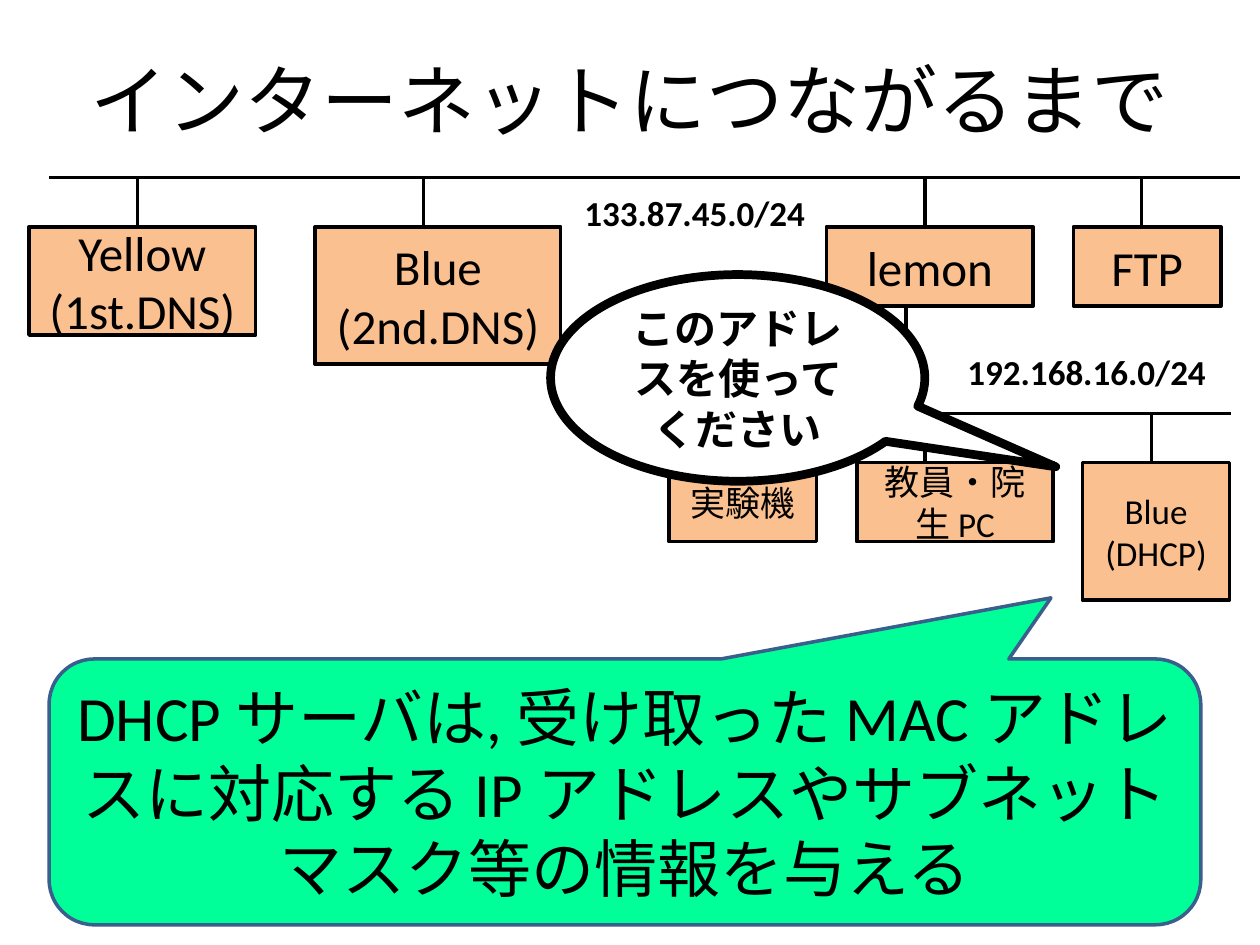
from lxml import etree
from pptx import Presentation
from pptx import util as u
from pptx.dml.color import RGBColor
from pptx.enum import shapes, text
from pptx.oxml.ns import qn

SCALE = 9144  # EMU per px, 100 px to the inch
FONT = "Calibri"
COLORS = {
    "ink": "000000",
    "host": "FAC090",
    "note": "00FF99",
    "note_line": "3A5F8C",
    "speech": "FFFFFF",
}


def px(*lengths):
    return [u.Emu(length * SCALE) for length in lengths]


class Diagram:
    """Holds the style and the slide; canvas is the slide or the current group."""

    def __init__(self, slide):
        self.slide = slide
        self.canvas = slide.shapes

    def color(self, name):
        return RGBColor.from_string(COLORS[name])

    def set_words(self, frame, words, size, bold=False,
                  align=text.PP_ALIGN.CENTER):
        frame.text = words
        frame.word_wrap = True
        for paragraph in frame.paragraphs:
            paragraph.alignment = align
            for run in paragraph.runs:
                run.font.name = FONT
                run.font.size = u.Pt(size)
                run.font.bold = bold
                run.font.color.rgb = self.color("ink")

    def title(self, words, box):
        title = self.slide.shapes.title
        title.left, title.top, title.width, title.height = px(*box)
        title.text_frame.vertical_anchor = text.MSO_ANCHOR.MIDDLE
        self.set_words(title.text_frame, words, 44)

    def shape(self, kind, box, words, size, fill, line="ink", weight=2,
              bold=False, adjust=()):
        shape = self.canvas.add_shape(kind, *px(*box))
        shape.shadow.inherit = False
        for index, value in enumerate(adjust):
            shape.adjustments[index] = value
        shape.fill.solid()
        shape.fill.fore_color.rgb = self.color(fill)
        shape.line.color.rgb = self.color(line)
        shape.line.width = u.Pt(weight)
        shape.text_frame.vertical_anchor = text.MSO_ANCHOR.MIDDLE
        self.set_words(shape.text_frame, words, size, bold)

    def line(self, x1, y1, x2, y2):
        line = self.canvas.add_connector(
            shapes.MSO_CONNECTOR.STRAIGHT, *px(x1, y1, x2, y2))
        line.line.color.rgb = self.color("ink")
        line.line.width = u.Pt(2)
        properties = line._element.find(qn("p:spPr"))
        etree.SubElement(properties, qn("a:effectLst"))

    def label(self, words, left, top):
        label = self.canvas.add_textbox(*px(left, top, 211, 44))
        self.set_words(label.text_frame, words, 20, True, text.PP_ALIGN.LEFT)

    def network(self, left, right, bus_y, size, hosts):
        """Draws a bus line with hosts hanging from it."""
        host_y = bus_y + 39
        self.line(right, bus_y, left, bus_y)
        for words, x, width, height, drop_x in hosts:
            self.shape(shapes.MSO_SHAPE.RECTANGLE, (x, host_y, width, height),
                       words, size, "host")
            self.line(drop_x, bus_y, drop_x, host_y)


def main():
    deck = Presentation()
    deck.slide_width, deck.slide_height = px(1000, 750)
    diagram = Diagram(deck.slides.add_slide(deck.slide_layouts[5]))
    diagram.title("インターネットにつながるまで", (50, 16, 900, 125))

    # Outer network: words, left, width, height, x of the drop line
    diagram.network(39, 984, 141, 28, [
        ("Yellow\n(1st.DNS)", 23, 180, 86, 109),
        ("Blue\n(2nd.DNS)", 250, 195, 109, 336),
        ("lemon", 656, 164, 63, 734),
        ("FTP", 852, 117, 63, 906),
    ])

    # Link from lemon to the inner network
    diagram.line(719, 242, 719, 328)
    diagram.label("192.168.16.0/24", 758, 273)

    # Inner network, kept as one group
    diagram.canvas = diagram.slide.shapes.add_group_shape().shapes
    diagram.network(445, 977, 328, 20, [
        ("実験機", 531, 117, 63, 586),
        ("教員・院生 PC", 680, 156, 63, 734),
        ("Blue (DHCP)", 859, 117, 109, 914),
    ])
    diagram.canvas = diagram.slide.shapes

    # Callouts of the DHCP server
    diagram.shape(
        shapes.MSO_SHAPE.ROUNDED_RECTANGULAR_CALLOUT, (39, 523, 914, 211),
        "DHCP サーバは, 受け取った MAC アドレスに対応する IP アドレスや"
        "サブネットマスク等の情報を与える",
        36, "note", "note_line", adjust=(0.37, -0.73, 0.17))
    diagram.shape(
        shapes.MSO_SHAPE.OVAL_CALLOUT, (437, 218, 297, 164),
        "このアドレスを使ってください", 24, "speech", weight=5, bold=True,
        adjust=(0.85, 0.43))
    diagram.label("133.87.45.0/24", 454, 147)

    deck.save("out.pptx")


if __name__ == "__main__":
    main()
